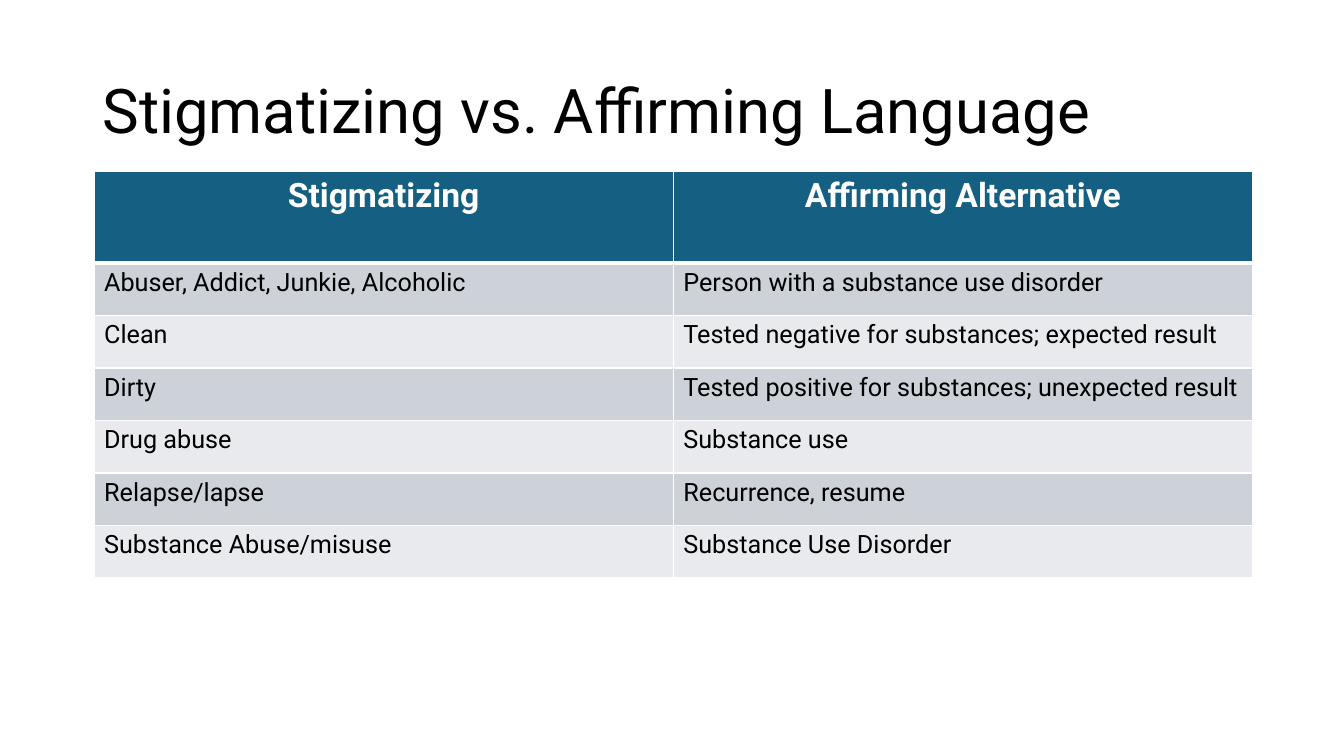
from dataclasses import dataclass

from lxml.etree import SubElement
from pptx import Presentation
from pptx.dml.color import RGBColor
from pptx.enum.text import MSO_ANCHOR, PP_ALIGN
from pptx.oxml.ns import qn
from pptx.slide import Slide
from pptx.table import _Cell
from pptx.text.text import TextFrame
from pptx.util import Inches, Pt

SLIDE_WIDTH = Inches(13.33)
SLIDE_HEIGHT = Inches(7.5)
FONT_NAME = "Roboto"

BLACK = RGBColor(0x00, 0x00, 0x00)
WHITE = RGBColor(0xFF, 0xFF, 0xFF)
HEADER_BLUE = RGBColor(0x15, 0x60, 0x82)
BAND_COLORS = (RGBColor(0xCC, 0xD2, 0xD8), RGBColor(0xE8, 0xEA, 0xED))

# Shares of the slide's width and height
LEFT = 0.07
CONTENT_WIDTH = 0.862
TITLE_LEFT = 0.069
TITLE_TOP = 0.053
TITLE_HEIGHT = 0.193
TABLE_TOP = 0.227
HEADER_HEIGHT = 0.121
ROW_HEIGHT = 0.0695


@dataclass(frozen=True)
class TermPair:
    stigmatizing: str
    affirming: str


HEADING = TermPair("Stigmatizing", "Affirming Alternative")
TERM_PAIRS = (
    TermPair("Abuser, Addict, Junkie, Alcoholic", "Person with a substance use disorder"),
    TermPair("Clean", "Tested negative for substances; expected result"),
    TermPair("Dirty", "Tested positive for substances; unexpected result"),
    TermPair("Drug abuse", "Substance use"),
    TermPair("Relapse/lapse", "Recurrence, resume"),
    TermPair("Substance Abuse/misuse", "Substance Use Disorder"),
)


def across(share: float) -> int:
    return round(SLIDE_WIDTH * share)


def down(share: float) -> int:
    return round(SLIDE_HEIGHT * share)


def write_text(
    frame: TextFrame,
    text: str,
    *,
    size: float,
    color: RGBColor = BLACK,
    bold: bool = False,
    alignment: PP_ALIGN = PP_ALIGN.LEFT,
    line_spacing: float = 1.0,
) -> None:
    paragraph = frame.paragraphs[0]
    paragraph.alignment = alignment
    paragraph.line_spacing = line_spacing
    run = paragraph.add_run()
    run.text = text
    run.font.name = FONT_NAME
    run.font.size = Pt(size)
    run.font.bold = bold
    run.font.color.rgb = color


def set_borders(cell: _Cell, bottom: float, top: float) -> None:
    """Draw white cell borders, with widths in points."""
    properties = cell._tc.get_or_add_tcPr()
    for side, width in (("L", 1), ("R", 1), ("T", top), ("B", bottom)):
        line = SubElement(properties, qn(f"a:ln{side}"), w=str(Pt(width)))
        fill = SubElement(line, qn("a:solidFill"))
        SubElement(fill, qn("a:srgbClr"), val=str(WHITE))


def add_title(slide: Slide, text: str) -> None:
    box = slide.shapes.add_textbox(
        across(TITLE_LEFT), down(TITLE_TOP), across(CONTENT_WIDTH), down(TITLE_HEIGHT)
    )
    box.text_frame.word_wrap = True
    box.text_frame.vertical_anchor = MSO_ANCHOR.MIDDLE
    write_text(box.text_frame, text, size=44, line_spacing=0.9)


def add_terms_table(slide: Slide) -> None:
    pairs = (HEADING, *TERM_PAIRS)
    table = slide.shapes.add_table(
        len(pairs),
        2,
        across(LEFT),
        down(TABLE_TOP),
        across(CONTENT_WIDTH),
        down(HEADER_HEIGHT + ROW_HEIGHT * len(TERM_PAIRS)),
    ).table
    for row_index, pair in enumerate(pairs):
        is_header = row_index == 0
        table.rows[row_index].height = down(HEADER_HEIGHT if is_header else ROW_HEIGHT)
        for column_index, text in enumerate((pair.stigmatizing, pair.affirming)):
            cell = table.cell(row_index, column_index)
            set_borders(cell, bottom=3 if is_header else 1, top=3 if row_index == 1 else 1)
            cell.fill.solid()
            if is_header:
                cell.fill.fore_color.rgb = HEADER_BLUE
                write_text(
                    cell.text_frame, text, size=24, color=WHITE, bold=True,
                    alignment=PP_ALIGN.CENTER,
                )
            else:
                cell.fill.fore_color.rgb = BAND_COLORS[(row_index - 1) % 2]
                write_text(cell.text_frame, text, size=18)


def main() -> None:
    presentation = Presentation()
    presentation.slide_width = SLIDE_WIDTH
    presentation.slide_height = SLIDE_HEIGHT
    slide = presentation.slides.add_slide(presentation.slide_layouts[6])
    add_title(slide, "Stigmatizing vs. Affirming Language")
    add_terms_table(slide)
    presentation.save("out.pptx")


if __name__ == "__main__":
    main()
